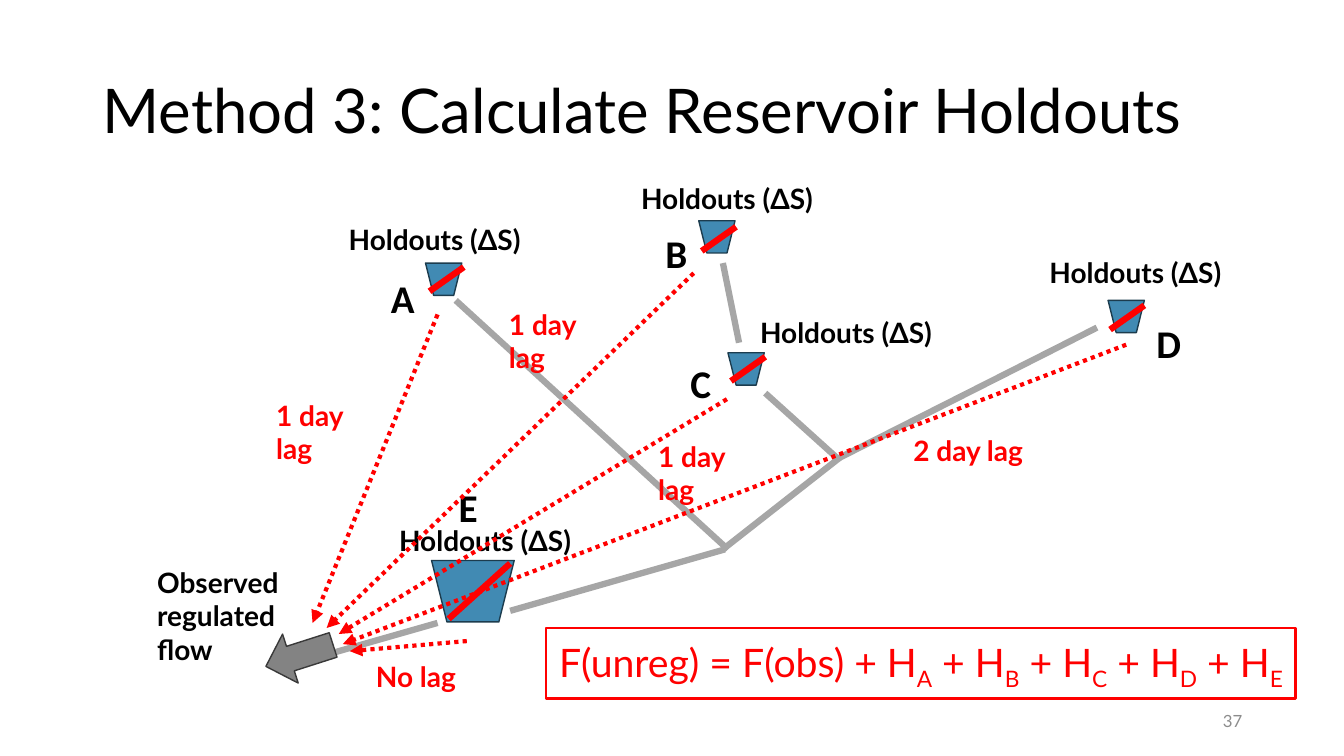
from typing import Any, NamedTuple

import pptx
import pptx.dml.color
import pptx.enum.dml
import pptx.enum.shapes
import pptx.enum.text
import pptx.oxml.ns
import pptx.oxml.xmlchemy
import pptx.util

SCALE = 9144  # EMU per px, 100 px to the inch
SHAPES = pptx.enum.shapes.MSO_SHAPE
ANCHOR = pptx.enum.text.MSO_ANCHOR
ALIGN = pptx.enum.text.PP_ALIGN
FIT = pptx.enum.text.MSO_AUTO_SIZE
COLORS = {
    "black": "000000", "red": "FF0000", "river": "A6A6A6", "pool": "418AB3",
    "bank": "1C3C4E", "flow": "838383", "rim": "393939", "page": "8C8C8C",
}


class Box(NamedTuple):
    left: int
    top: int
    width: int
    height: int


class Line(NamedTuple):
    x1: int
    y1: int
    x2: int
    y2: int


class Label(NamedTuple):
    text: str
    box: Box
    color: str = "black"
    size: int = 20
    face: str = "Lato"


RIVERS = [
    Line(452, 298, 722, 545), Line(1088, 325, 831, 455), Line(717, 261, 733, 340),
    Line(759, 390, 831, 455), Line(833, 454, 717, 545), Line(719, 545, 506, 606),
]
OUTLET = Line(434, 618, 322, 650)
POOLS = [Box(x, y, 36, 32) for x, y in ((422, 261), (693, 219), (1099, 298), (722, 350))]
POOLS.append(Box(428, 556, 82, 61))
GATES = [Line(x, y, x - 34, y + 24)
         for x, y in ((460, 265), (730, 225), (759, 354), (1135, 303))]
MAIN_GATE = Line(506, 559, 445, 614)
LAGS = [
    Line(434, 312, 310, 618), Line(688, 271, 324, 623), Line(721, 396, 336, 629),
    Line(1117, 342, 340, 639), Line(463, 636, 347, 646),
]
LABELS = [Label("Holdouts (ΔS)", Box(x, y, 207, 44))
          for x, y in ((1031, 249), (626, 175), (744, 308), (336, 216), (386, 514))]
LABELS += [Label(name, Box(x, y, 50, 57), size=28, face="Calibri")
           for name, x, y in (("A", 378, 267), ("C", 675, 352), ("B", 650, 223),
                              ("E", 445, 475), ("D", 1137, 312))]
NOTES = [Label(text, Box(x, y, width, 44), "red")
         for text, x, y, width in (("1 day lag", 264, 390, 127), ("2 day lag", 896, 425, 156),
                                   ("1 day lag", 495, 300, 127), ("1 day lag", 643, 431, 127),
                                   ("No lag", 363, 649, 127))]
NOTES.append(Label("Observed regulated flow", Box(146, 556, 198, 77)))


def px(size: int) -> pptx.util.Emu:
    return pptx.util.Emu(size * SCALE)


def rgb(name: str) -> pptx.dml.color.RGBColor:
    return pptx.dml.color.RGBColor.from_string(COLORS[name])


def put(target: Any, values: dict[str, Any]) -> None:
    """Set each named value as an attribute of the target."""
    for name, value in values.items():
        setattr(target, name, value)


def stroke(line: Any, color: str, width: float) -> None:
    line.color.rgb = rgb(color)
    line.width = pptx.util.Pt(width)


def draw_line(slide: Any, line: Line, color: str, width: float = 4.5) -> Any:
    wire = slide.shapes.add_connector(
        pptx.enum.shapes.MSO_CONNECTOR.STRAIGHT, *map(px, line))
    stroke(wire.line, color, width)
    wire.element.spPr.append(pptx.oxml.xmlchemy.OxmlElement("a:effectLst"))
    return wire


def draw_lag(slide: Any, line: Line) -> None:
    """Draw a dotted arrow from a reservoir to the gauge."""
    wire = draw_line(slide, line, "red", 3)
    wire.line.dash_style = pptx.enum.dml.MSO_LINE.ROUND_DOT
    tip = pptx.oxml.xmlchemy.OxmlElement("a:tailEnd")
    tip.set("type", "triangle")
    wire.element.spPr.find(pptx.oxml.ns.qn("a:ln")).append(tip)


def draw_shape(slide: Any, kind: Any, box: Box, fill: str, edge: str, turn: float) -> None:
    shape = slide.shapes.add_shape(kind, *map(px, box))
    shape.shadow.inherit = False
    shape.rotation = turn
    shape.fill.solid()
    shape.fill.fore_color.rgb = rgb(fill)
    stroke(shape.line, edge, 1)


def add_run(para: Any, label: Label, text: str, bold: bool = False) -> Any:
    run = para.add_run()
    run.text = text
    put(run.font, {"name": label.face, "size": pptx.util.Pt(label.size), "bold": bold})
    run.font.color.rgb = rgb(label.color)
    return run


def add_text(slide: Any, label: Label, frame: dict[str, Any], para: dict[str, Any],
             bold: bool = False) -> Any:
    """Add a wrapped text box and return it."""
    shape = slide.shapes.add_textbox(*map(px, label.box))
    put(shape.text_frame, {"word_wrap": True, **frame})
    first = shape.text_frame.paragraphs[0]
    put(first, para)
    add_run(first, label, label.text, bold)
    return shape


def draw_sum(slide: Any) -> None:
    """Draw the framed formula with its subscripts."""
    label = Label("F(unreg) = F(obs)", Box(542, 623, 743, 70), "red", 28)
    shape = add_text(slide, label, {"vertical_anchor": ANCHOR.MIDDLE},
                     {"alignment": ALIGN.CENTER, "line_spacing": 0.9})
    stroke(shape.line, "red", 1.5)
    para = shape.text_frame.paragraphs[0]
    for name in "ABCDE":
        add_run(para, label, " + H")
        sub = add_run(para, label, name)
        sub.font._element.set("baseline", "-25000")


def main() -> None:
    deck = pptx.Presentation()
    put(deck, {"slide_width": px(1333), "slide_height": px(750)})
    slide = deck.slides.add_slide(deck.slide_layouts[6])
    middle = {"vertical_anchor": ANCHOR.MIDDLE}
    grow = {"auto_size": FIT.SHAPE_TO_FIT_TEXT}

    title = Label("Method 3: Calculate Reservoir Holdouts", Box(92, 40, 1150, 145), size=44)
    add_text(slide, title, middle, {"line_spacing": 0.9})
    for river in RIVERS:
        draw_line(slide, river, "river")
    for pool in POOLS:
        draw_shape(slide, SHAPES.TRAPEZOID, pool, "pool", "bank", 180)
    draw_line(slide, OUTLET, "river")
    draw_shape(slide, SHAPES.RIGHT_ARROW, Box(262, 625, 70, 51), "flow", "rim", 162.3)
    for gate in GATES:
        draw_line(slide, gate, "red")
    for label in LABELS:
        add_text(slide, label, grow, {}, bold=True)
    draw_sum(slide)
    for lag in LAGS:
        draw_lag(slide, lag)
    for note in NOTES:
        add_text(slide, note, grow, {}, bold=True)
    draw_line(slide, MAIN_GATE, "red")
    page = Label("37", Box(942, 695, 300, 40), "page", 12)
    add_text(slide, page, middle, {"alignment": ALIGN.RIGHT})
    deck.save("out.pptx")


if __name__ == "__main__":
    main()
